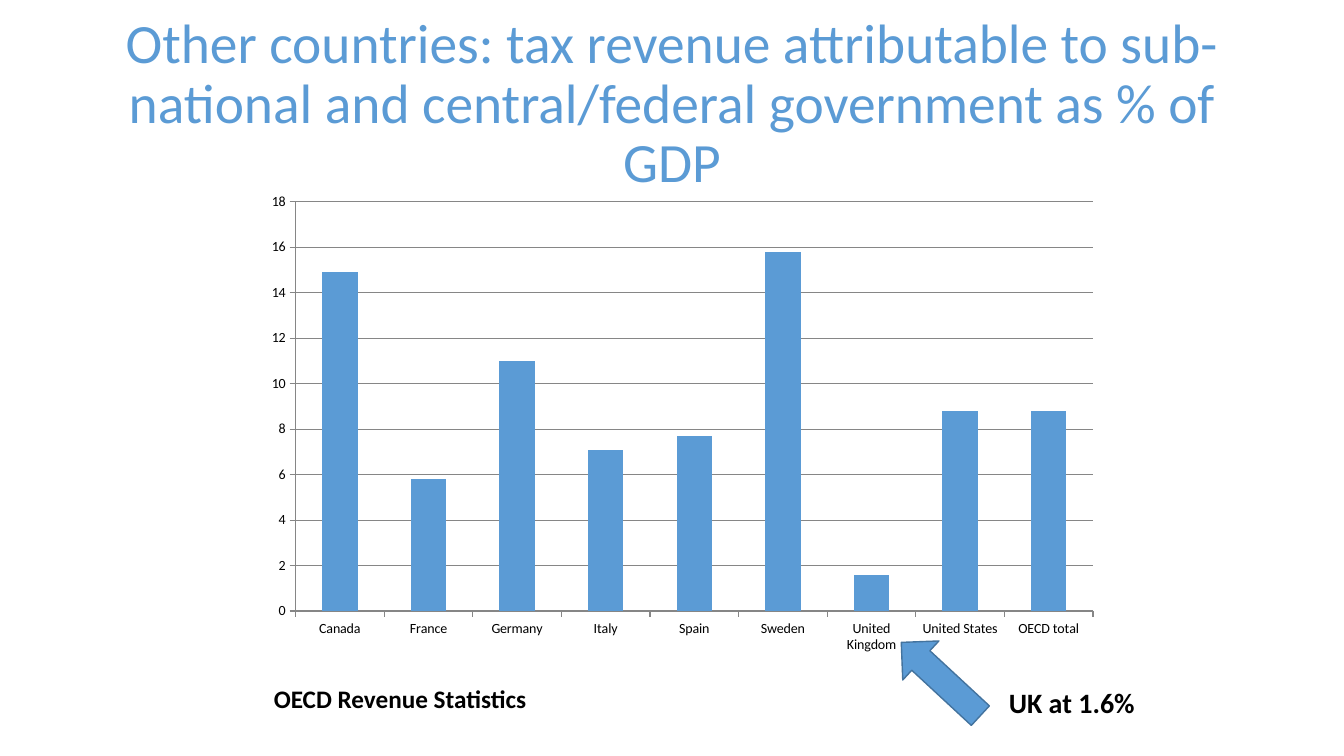
from lxml.etree import SubElement
from pptx import Presentation
from pptx.chart.data import CategoryChartData
from pptx.dml.color import RGBColor
from pptx.enum.chart import XL_CHART_TYPE, XL_TICK_MARK
from pptx.enum.shapes import MSO_SHAPE
from pptx.enum.text import MSO_ANCHOR, PP_ALIGN
from pptx.oxml import parse_xml
from pptx.oxml.ns import nsdecls
from pptx.util import Pt

FONT = "Calibri"
BLUE, DARK_BLUE, BLACK, GRAY = "5B9BD5", "43739E", "000000", "868686"
SUBNATIONAL_REVENUE = {
    "Canada": 14.9, "France": 5.8, "Germany": 11, "Italy": 7.1, "Spain": 7.7,
    "Sweden": 15.8, "United Kingdom": 1.6, "United States": 8.8, "OECD total": 8.8,
}


def color(hex_string):
    return RGBColor.from_string(hex_string)


def add_text(slide, box, text, size, hex_color=BLACK, bold=False, align=PP_ALIGN.LEFT,
             anchor=MSO_ANCHOR.TOP, line_spacing=1.0, bottom_inset=3.6):
    frame = slide.shapes.add_textbox(*map(Pt, box)).text_frame
    frame.word_wrap = True
    frame.vertical_anchor = anchor
    frame.margin_bottom = Pt(bottom_inset)
    paragraph = frame.paragraphs[0]
    paragraph.alignment = align
    paragraph.line_spacing = line_spacing
    run = paragraph.add_run()
    run.text = text
    run.font.name, run.font.size, run.font.bold = FONT, Pt(size), bold
    run.font.color.rgb = color(hex_color)


def add_title(slide, box):
    add_text(slide, box,
             "Other countries: tax revenue attributable to sub-national "
             "and central/federal government as % of GDP",
             39.6, BLUE, align=PP_ALIGN.CENTER, anchor=MSO_ANCHOR.MIDDLE,
             line_spacing=0.9, bottom_inset=46)


def fix_plot_area(chart, **fractions):
    """Set the inner plot area as fractions of the chart's size."""
    plot_area = chart.plots[0]._element.getparent()
    for layout in plot_area.findall("{*}layout"):
        plot_area.remove(layout)
    layout = parse_xml(f"<c:layout {nsdecls('c')}><c:manualLayout/></c:layout>")
    manual = layout[0]
    settings = {"layoutTarget": "inner", "xMode": "edge", "yMode": "edge", **fractions}
    namespace = manual.tag.split("}")[0] + "}"
    for name, value in settings.items():
        SubElement(manual, namespace + name, val=str(value))
    plot_area.insert(0, layout)


def add_revenue_chart(slide, box):
    data = CategoryChartData()
    data.categories = list(SUBNATIONAL_REVENUE)
    data.add_series("Series 1", list(SUBNATIONAL_REVENUE.values()))
    chart = slide.shapes.add_chart(
        XL_CHART_TYPE.COLUMN_CLUSTERED, *map(Pt, box), data).chart
    chart.has_legend = chart.has_title = False
    chart.font.name, chart.font.size = FONT, Pt(10)
    chart.font.color.rgb = color(BLACK)

    columns = chart.plots[0]
    columns.gap_width = 150
    columns.vary_by_categories = False
    fill = columns.series[0].format.fill
    fill.solid()
    fill.fore_color.rgb = color(BLUE)

    percent_axis = chart.value_axis
    percent_axis.minimum_scale, percent_axis.maximum_scale = 0, 18
    percent_axis.major_unit = 2
    percent_axis.has_major_gridlines = True
    for axis in (chart.category_axis, percent_axis):
        axis.major_tick_mark = XL_TICK_MARK.OUTSIDE
    for ruled in (chart.category_axis, percent_axis, percent_axis.major_gridlines):
        ruled.format.line.color.rgb = color(GRAY)
        ruled.format.line.width = Pt(0.75)
    fix_plot_area(chart, x=0.05, y=0.04, w=0.93, h=0.86)


def add_uk_callout(slide, box):
    left, top, width, height = box
    arrow = slide.shapes.add_shape(
        MSO_SHAPE.RIGHT_ARROW, Pt(left), Pt(top), Pt(77), Pt(38))
    arrow.rotation = 222.8
    arrow.shadow.inherit = False
    arrow.fill.solid()
    arrow.fill.fore_color.rgb = color(BLUE)
    arrow.line.color.rgb = color(DARK_BLUE)
    arrow.line.width = Pt(1)
    add_text(slide, (left + 80, top + 20, width - 80, height - 20),
             "UK at 1.6%", 20, bold=True)


def add_source_note(slide, box):
    add_text(slide, box, "OECD Revenue Statistics", 18, bold=True)


def main():
    presentation = Presentation()
    presentation.slide_width, presentation.slide_height = Pt(960), Pt(540)
    slide = presentation.slides.add_slide(presentation.slide_layouts[6])
    add_title(slide, (66, 44, 828, 104.5))
    add_revenue_chart(slide, (180.5, 130.5, 612.5, 340))
    add_uk_callout(slide, (633.5, 466, 285, 51.5))
    add_source_note(slide, (188.5, 484.5, 285, 29))
    presentation.save("out.pptx")


if __name__ == "__main__":
    main()
